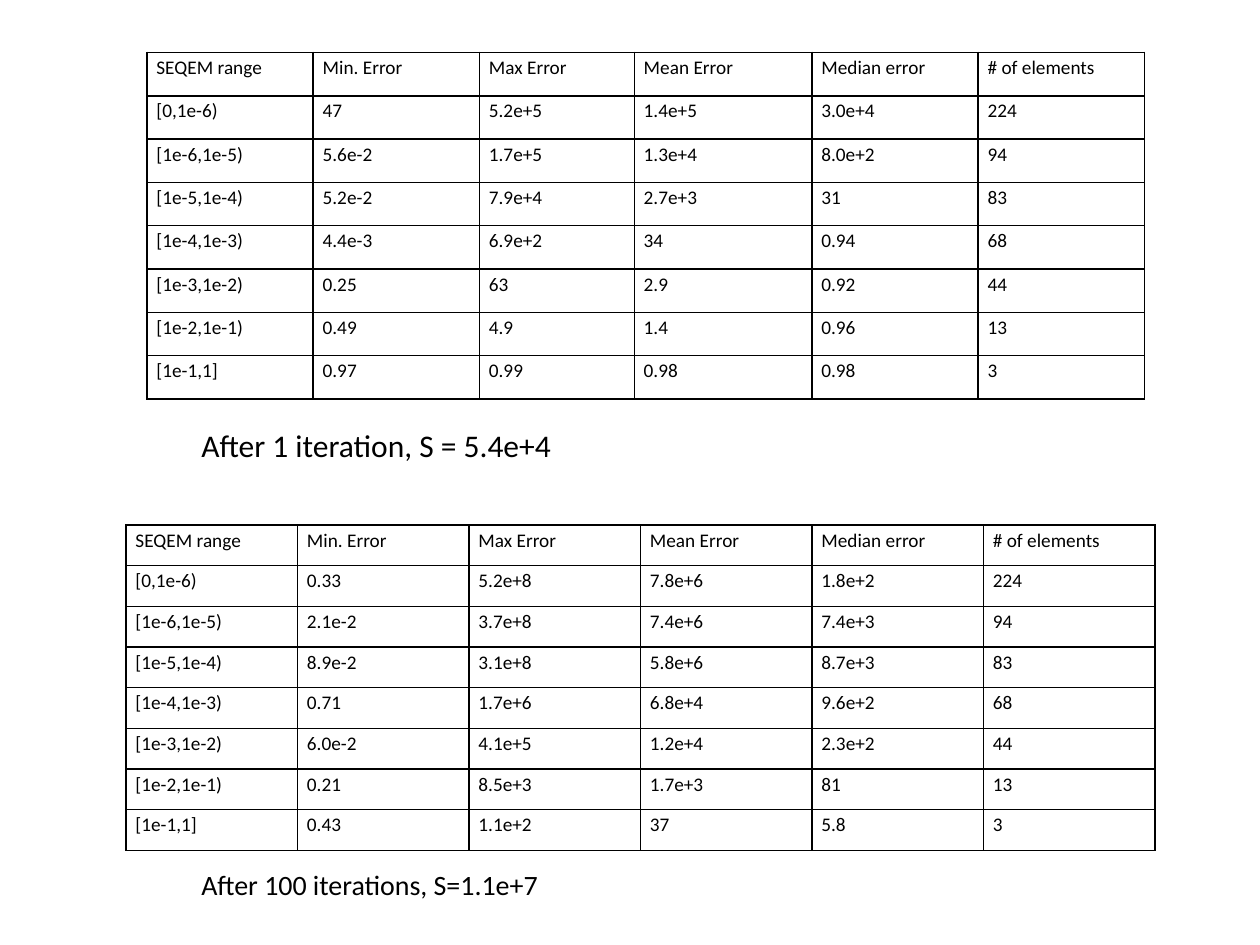
from dataclasses import dataclass

from lxml import etree
from pptx import Presentation
from pptx.dml.color import RGBColor
from pptx.enum import text
from pptx.oxml.ns import qn
from pptx.util import Pt


@dataclass(frozen=True)
class Theme:
    font: str = "Calibri"
    ink: str = "000000"
    cell_size: float = 11
    cell_spacing: float = 1.15
    cell_inset: float = 5.4
    border: float = 1


@dataclass(frozen=True)
class ErrorTable:
    left: float
    top: float
    column_widths: tuple[float, ...]
    row_height: float
    errors: tuple[str, ...]  # min, max, mean and median for each range


@dataclass(frozen=True)
class Caption:
    wording: str
    left: float
    top: float
    width: float
    height: float
    size: float
    wrap: bool
    anchor: text.MSO_ANCHOR


THEME = Theme()

# Headings, ranges and element counts shared by both tables
HEADINGS = ("SEQEM range", "Min. Error", "Max Error", "Mean Error",
            "Median error", "# of elements")
RANGES = ("[0,1e-6)", "[1e-6,1e-5)", "[1e-5,1e-4)", "[1e-4,1e-3)",
          "[1e-3,1e-2)", "[1e-2,1e-1)", "[1e-1,1]")
COUNTS = ("224", "94", "83", "68", "44", "13", "3")

TABLES = (
    ErrorTable(84, 30, (95, 95, 88.5, 101.5, 95, 95), 24.75, (
        "47 5.2e+5 1.4e+5 3.0e+4",
        "5.6e-2 1.7e+5 1.3e+4 8.0e+2",
        "5.2e-2 7.9e+4 2.7e+3 31",
        "4.4e-3 6.9e+2 34 0.94",
        "0.25 63 2.9 0.92",
        "0.49 4.9 1.4 0.96",
        "0.97 0.99 0.98 0.98",
    )),
    ErrorTable(72, 300, (98,) * len(HEADINGS), 23.25, (
        "0.33 5.2e+8 7.8e+6 1.8e+2",
        "2.1e-2 3.7e+8 7.4e+6 7.4e+3",
        "8.9e-2 3.1e+8 5.8e+6 8.7e+3",
        "0.71 1.7e+6 6.8e+4 9.6e+2",
        "6.0e-2 4.1e+5 1.2e+4 2.3e+2",
        "0.21 8.5e+3 1.7e+3 81",
        "0.43 1.1e+2 37 5.8",
    )),
)

CAPTIONS = (
    Caption("After 100 iterations, S=1.1e+7", 108, 492, 252, 26.65, 16,
            True, text.MSO_ANCHOR.MIDDLE),
    Caption("After 1 iteration, S = 5.4e+4", 108, 240, 217.5, 29, 18,
            False, text.MSO_ANCHOR.TOP),
)


def add_run(paragraph, wording: str, size: float) -> None:
    run = paragraph.add_run()
    run.text = wording
    run.font.name = THEME.font
    run.font.size = Pt(size)
    run.font.color.rgb = RGBColor.from_string(THEME.ink)


def add_borders(cell) -> None:
    properties = cell._tc.get_or_add_tcPr()
    # Border lines must come before the fill
    for position, side in enumerate(("lnL", "lnR", "lnT", "lnB")):
        line = etree.Element(qn(f"a:{side}"), w=str(Pt(THEME.border)))
        fill = etree.SubElement(line, qn("a:solidFill"))
        etree.SubElement(fill, qn("a:srgbClr"), val=THEME.ink)
        properties.insert(position, line)


def fill_cell(cell, wording: str) -> None:
    cell.fill.background()
    cell.margin_left = cell.margin_right = Pt(THEME.cell_inset)
    cell.margin_top = cell.margin_bottom = Pt(0)
    paragraph = cell.text_frame.paragraphs[0]
    paragraph.line_spacing = THEME.cell_spacing
    add_run(paragraph, wording, THEME.cell_size)
    add_borders(cell)


def draw_table(slide, data: ErrorTable) -> None:
    rows = [HEADINGS] + [
        (label, *errors.split(), count)
        for label, errors, count in zip(RANGES, data.errors, COUNTS)
    ]
    table = slide.shapes.add_table(
        len(rows), len(HEADINGS), Pt(data.left), Pt(data.top),
        Pt(sum(data.column_widths)), Pt(data.row_height * len(rows))).table
    table.first_row = table.horz_banding = False
    for column, width in zip(table.columns, data.column_widths):
        column.width = Pt(width)
    for table_row, values in zip(table.rows, rows):
        table_row.height = Pt(data.row_height)
        for cell, value in zip(table_row.cells, values):
            fill_cell(cell, value)


def draw_caption(slide, caption: Caption) -> None:
    shape = slide.shapes.add_textbox(Pt(caption.left), Pt(caption.top),
                                     Pt(caption.width), Pt(caption.height))
    frame = shape.text_frame
    frame.word_wrap = caption.wrap
    frame.auto_size = text.MSO_AUTO_SIZE.SHAPE_TO_FIT_TEXT
    frame.vertical_anchor = caption.anchor
    add_run(frame.paragraphs[0], caption.wording, caption.size)


def main() -> None:
    presentation = Presentation()
    presentation.slide_width, presentation.slide_height = Pt(720), Pt(540)
    slide = presentation.slides.add_slide(presentation.slide_layouts[6])

    # Error statistics, then the iteration captions
    for data in TABLES:
        draw_table(slide, data)
    for caption in CAPTIONS:
        draw_caption(slide, caption)

    presentation.save("out.pptx")


if __name__ == "__main__":
    main()
